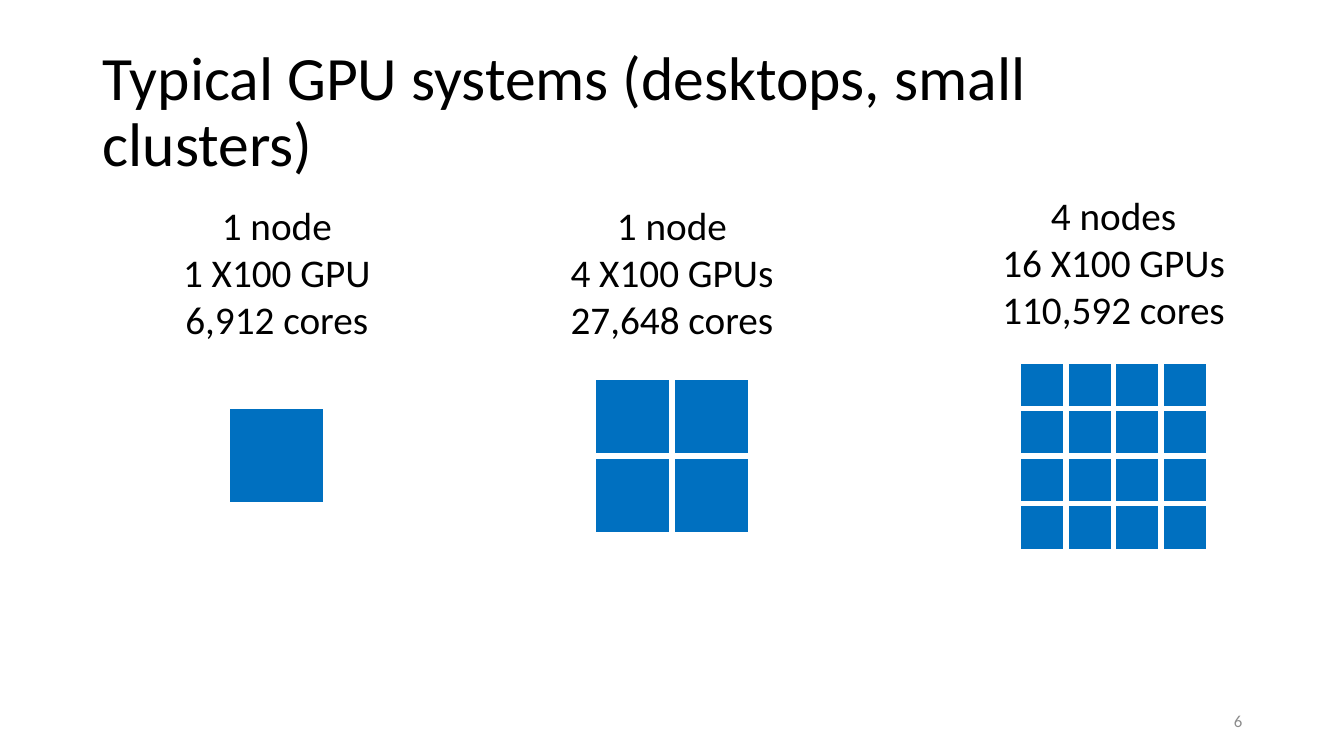
from lxml import etree
from pptx import Presentation
from pptx.dml.color import RGBColor
from pptx.enum import text
from pptx.oxml import ns
from pptx.util import Inches, Pt

TITLE = "Typical GPU systems (desktops, small clusters)"
PAGE = "6"
# lines, label box (left, top, width), grid (left, top, side), cells per side
SYSTEMS = [
    (["1 node", "1 X100 GPU", "6,912 cores"],
     (1.69, 1.95, 2.11), (2.25, 4.03, 0.98), 1),
    (["1 node", "4 X100 GPUs", "27,648 cores"],
     (5.53, 1.95, 2.27), (5.88, 3.74, 1.57), 2),
    (["4 nodes", "16 X100 GPUs", "110,592 cores"],
     (9.81, 1.85, 2.47), (10.1, 3.58, 1.89), 4),
]
LABEL_H = 1.99
THEME = {
    "font": "Calibri", "ink": "000000", "muted": "8C8C8C",
    "gpu": "0070C0", "gap": "FFFFFF", "gap_pt": 4.5,
    "title": 44, "label": 28, "page": 12,
}


def add_text(slide, lines, box, size, color="ink", align="LEFT",
             anchor="MIDDLE", wrap=True, spacing=1.0):
    frame = slide.shapes.add_textbox(*map(Inches, box)).text_frame
    frame.text = "\n".join(lines)
    frame.word_wrap = wrap
    frame.auto_size = text.MSO_AUTO_SIZE.NONE
    frame.vertical_anchor = text.MSO_ANCHOR[anchor]
    for para in frame.paragraphs:
        para.alignment = text.PP_ALIGN[align]
        para.line_spacing = spacing
        for run in para.runs:
            run.font.name = THEME["font"]
            run.font.size = Pt(THEME[size])
            run.font.color.rgb = RGBColor.from_string(THEME[color])


def add_borders(cell):
    """Draw the gap colour on all four sides, ahead of the cell's fill."""
    props = cell._tc.get_or_add_tcPr()
    for spot, side in enumerate(("lnL", "lnR", "lnT", "lnB")):
        line = etree.Element(ns.qn("a:" + side), w=str(Pt(THEME["gap_pt"])))
        fill = etree.SubElement(line, ns.qn("a:solidFill"))
        etree.SubElement(fill, ns.qn("a:srgbClr"), val=THEME["gap"])
        props.insert(spot, line)


def add_grid(slide, left, top, side, count):
    """Show count x count GPUs as a square table."""
    table = slide.shapes.add_table(
        count, count, *map(Inches, (left, top, side, side))).table
    table.first_row = table.horz_banding = False
    for column in table.columns:
        column.width = Inches(side / count)
    for row in table.rows:
        row.height = Inches(side / count)
    for cell in table.iter_cells():
        cell.fill.solid()
        cell.fill.fore_color.rgb = RGBColor.from_string(THEME["gpu"])
        add_borders(cell)


def main():
    deck = Presentation()
    deck.slide_width, deck.slide_height = Inches(13.33), Inches(7.5)
    slide = deck.slides.add_slide(deck.slide_layouts[6])
    add_text(slide, [TITLE], (0.92, 0.4, 11.5, 1.45), "title", spacing=0.9)
    for lines, label, grid, count in SYSTEMS:
        add_text(slide, lines, (*label, LABEL_H), "label",
                 align="CENTER", anchor="TOP", wrap=False)
        add_grid(slide, *grid, count)
    add_text(slide, [PAGE], (9.42, 6.95, 3, 0.4), "page", "muted", "RIGHT")
    deck.save("out.pptx")


if __name__ == "__main__":
    main()
